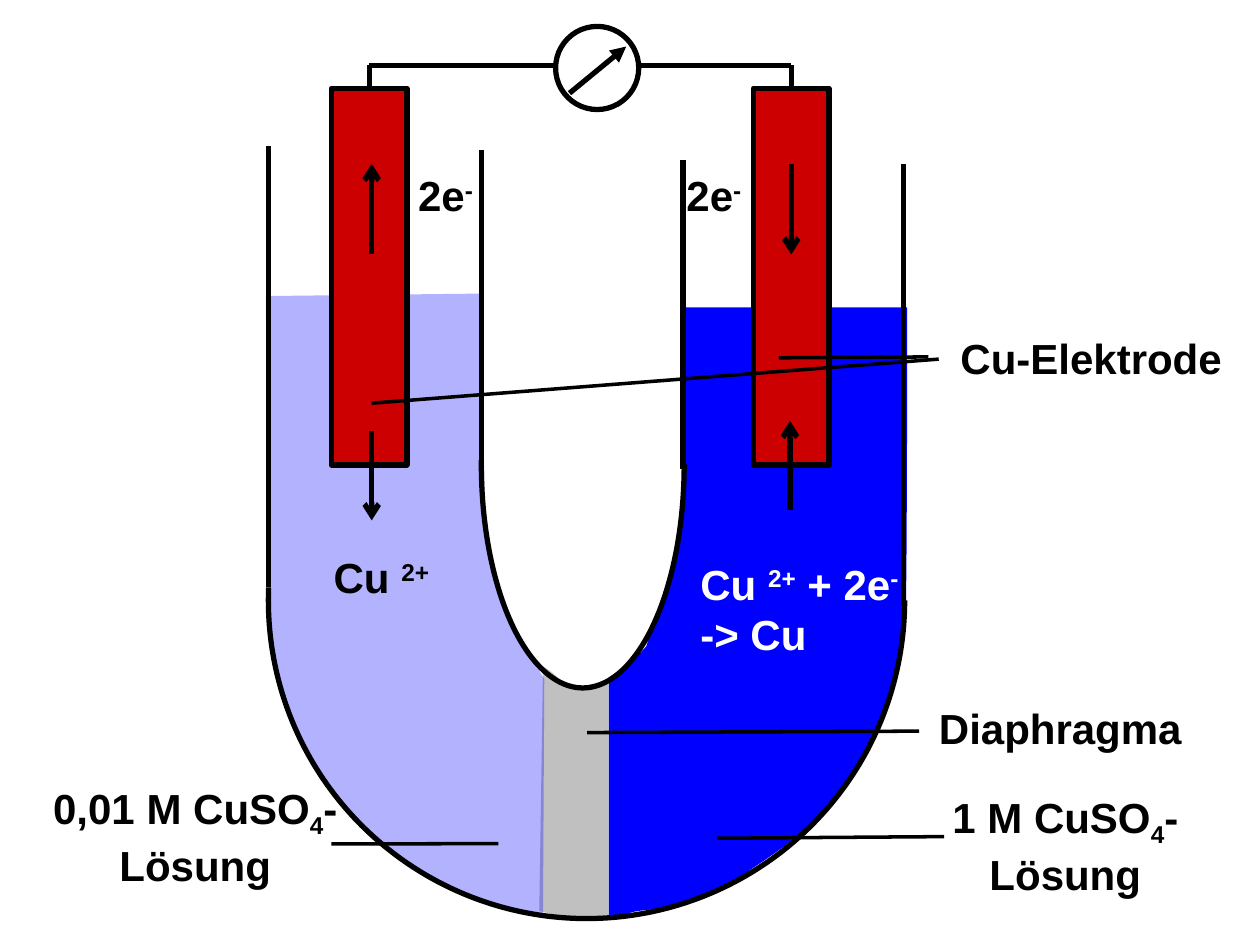
from dataclasses import dataclass

from lxml import etree
from pptx import Presentation
from pptx.dml.color import RGBColor
from pptx.enum.shapes import MSO_CONNECTOR, MSO_SHAPE
from pptx.enum.text import MSO_ANCHOR, PP_ALIGN
from pptx.oxml.ns import qn
from pptx.util import Inches, Pt

STRAIGHT = MSO_CONNECTOR.STRAIGHT
RECT, OVAL, ARC = MSO_SHAPE.RECTANGLE, MSO_SHAPE.OVAL, MSO_SHAPE.ARC
CALLOUT = MSO_SHAPE.LINE_CALLOUT_1_NO_BORDER
CENTER, LEFT = PP_ALIGN.CENTER, PP_ALIGN.LEFT
TOP, MIDDLE = MSO_ANCHOR.TOP, MSO_ANCHOR.MIDDLE


@dataclass(frozen=True)
class Theme:
    ink: str = "000000"
    paper: str = "FFFFFF"
    solution: str = "0000FF"
    diaphragm: str = "C0C0C0"
    copper: str = "CC0000"
    font: str = "Arial"
    size: int = 24
    heavy: int = 3
    fine: int = 2


THEME = Theme()
SUPER, SUB = 30, -25  # baseline shift in percent

# Content: fills as outlines; two numbers make a line, six a curve
FILLS = [
    (THEME.solution, None, [
        (5.42, 2.44), (7.2, 2.44), (7.2, 3.26, 7.2, 4.09, 7.19, 4.91),
        (7.12, 5.53, 6.96, 5.83, 6.76, 6.16), (6.55, 6.49, 6.25, 6.71, 5.96, 6.9),
        (5.71, 7.1, 5.91, 6.94, 5.33, 7.21), (4.79, 7.23, 5.11, 7.29, 4.83, 7.26),
        (4.83, 5.38), (5.19, 5.13, 4.88, 5.4, 5.13, 5.13),
        (5.2, 4.91, 5.18, 4.94, 5.25, 4.77), (5.33, 4.6, 5.4, 4.39, 5.43, 3.99)]),
    (THEME.diaphragm, None, [
        (4.31, 5.29), (4.56, 5.43, 4.38, 5.53, 4.83, 5.39), (4.83, 7.26),
        (4.58, 7.3, 4.58, 7.31, 4.28, 7.23)]),
    (THEME.solution, 30, [
        (2.11, 2.35), (2.13, 4.99, 2.12, 4.01, 2.13, 4.95),
        (2.24, 5.63, 2.41, 5.98, 2.77, 6.42), (2.96, 6.74, 3.02, 6.66, 3.28, 6.86),
        (3.54, 7.04, 3.49, 7.03, 3.8, 7.13), (4.19, 7.26, 4.14, 7.21, 4.31, 7.25),
        (4.32, 5.39), (4.01, 4.89, 3.93, 4.68, 3.85, 4.17), (3.82, 2.33)]),
]

# Tube: bends as boxes before their quarter turn, walls as x, top, bottom
BENDS = [(2.13, 2.24, 5.05, 5.05), (2.85, 2.88, 3.55, 1.61)]
WALLS = [(2.13, 1.16, 4.66), (7.17, 1.3, 4.8), (3.82, 1.19, 3.65), (5.42, 1.27, 3.72)]

# Circuit
ELECTRODE_CENTERS = (2.93, 6.28)
ELECTRODE_TOP, ELECTRODE_WIDTH, ELECTRODE_HEIGHT = 0.7, 0.6, 2.99
WIRE_Y = 0.52
METER = (4.41, 0.21, 0.66, 0.66)
NEEDLE = (4.52, 0.74, 4.97, 0.37)

# Flow arrows: x, from y, to y
FLOWS = [(2.95, 2.02, 1.3), (6.27, 4.05, 3.34), (2.95, 3.42, 4.13), (6.28, 1.3, 2.02)]

# Callouts: box, leader (y, x, y, x as shares of the box), fill, anchor, runs
ELECTRODE_LABEL = ((7.45, 2.49, 2.42, 0.7), (0.49, -0.034, 0.5, -0.524),
                   THEME.paper, MIDDLE, [("Cu-Elektrode", 0)])
OTHER_LABELS = [
    ((7.26, 6.23, 2.39, 1.01), (0.406, 0.098, 0.419, -0.656), None, TOP,
     [("1 M CuSO", 0), ("4", SUB), ("-Lösung", 0)]),
    ((0.23, 6.16, 2.64, 0.9), (0.598, 0.909, 0.596, 1.411), None, TOP,
     [("0,01 M CuSO", 0), ("4", SUB), ("-Lösung", 0)]),
    ((7.17, 5.53, 2.49, 0.63), (0.434, 0.05, 0.452, -1.008), None, TOP,
     [("Diaphragma", 0)]),
]
SECOND_LEADER = (2.95, 3.2, 7.45, 2.85)

# Reaction texts: box, colour, runs
ELECTRONS = [("2e", 0), ("-", SUPER)]
REACTIONS = [
    ((3.22, 1.3, 1.1, 0.5), THEME.ink, ELECTRONS),
    ((5.35, 1.3, 1.1, 0.5), THEME.ink, ELECTRONS),
    ((2.55, 4.33, 1.04, 0.5), THEME.ink, [("Cu ", 0), ("2+", SUPER)]),
    ((5.46, 4.38, 1.98, 0.91), THEME.paper,
     [("Cu ", 0), ("2+", SUPER), (" + 2e", 0), ("-", SUPER), (" -> Cu", 0)]),
]


def rgb(color):
    return RGBColor.from_string(color)


def style(shape, fill=None, line=None, width=THEME.heavy):
    shape.shadow.inherit = False
    if fill:
        shape.fill.solid()
        shape.fill.fore_color.rgb = rgb(fill)
    else:
        shape.fill.background()
    if line:
        shape.line.color.rgb = rgb(line)
        shape.line.width = Pt(width)
    else:
        shape.line.fill.background()


def add_shape(slide, kind, box, **look):
    shape = slide.shapes.add_shape(kind, *map(Inches, box))
    style(shape, **look)
    return shape


def add_line(slide, ends, width=THEME.heavy, head=None):
    line = slide.shapes.add_connector(STRAIGHT, *map(Inches, ends))
    line.line.color.rgb = rgb(THEME.ink)
    line.line.width = Pt(width)
    if head:
        etree.SubElement(line.line._get_or_add_ln(), qn("a:tailEnd"), type=head)
    etree.SubElement(line._element.spPr, qn("a:effectLst"))


def trace(outline, steps=16):
    """Turn lines and cubic curves into a list of points in EMU."""
    points = [outline[0]]
    for segment in outline[1:]:
        if len(segment) == 2:
            points.append(segment)
            continue
        start, c1, c2, end = points[-1], segment[:2], segment[2:4], segment[4:]
        for t in (i / steps for i in range(1, steps + 1)):
            u = 1 - t
            points.append(tuple(
                u**3 * a + 3 * u * u * t * b + 3 * u * t * t * c + t**3 * d
                for a, b, c, d in zip(start, c1, c2, end)))
    return [(Inches(x), Inches(y)) for x, y in points]


def add_fill(slide, color, opacity, outline):
    first, *rest = trace(outline)
    builder = slide.shapes.build_freeform(*first)
    builder.add_line_segments(rest, close=True)
    shape = builder.convert_to_shape()
    style(shape, fill=color)
    if opacity:
        tint = shape._element.spPr.find(qn("a:solidFill"))[0]
        etree.SubElement(tint, qn("a:alpha"), val=str(opacity * 1000))


def write(shape, runs, color=THEME.ink, align=LEFT, anchor=TOP):
    frame = shape.text_frame
    frame.word_wrap = True
    frame.vertical_anchor = anchor
    paragraph = frame.paragraphs[0]
    paragraph.alignment = align
    for text, shift in runs:
        run = paragraph.add_run()
        run.text = text
        run.font.name, run.font.size, run.font.bold = THEME.font, Pt(THEME.size), True
        run.font.color.rgb = rgb(color)
        if shift:
            run._r.get_or_add_rPr().set("baseline", str(shift * 1000))


def add_callout(slide, box, leader, fill, anchor, runs):
    callout = add_shape(slide, CALLOUT, box, fill=fill, line=THEME.ink, width=THEME.fine)
    for i, share in enumerate(leader):
        callout.adjustments[i] = share
    write(callout, runs, align=CENTER, anchor=anchor)


def main():
    deck = Presentation()
    deck.slide_width, deck.slide_height = Inches(10), Inches(7.5)
    slide = deck.slides.add_slide(deck.slide_layouts[6])

    # Solutions, diaphragm and U-tube
    for fill in FILLS:
        add_fill(slide, *fill)
    for box in BENDS:
        bend = add_shape(slide, ARC, box, line=THEME.ink)
        bend.rotation = 90
        bend.adjustments[0], bend.adjustments[1] = 162, 55.4  # 270° to 92°
    for x, top, bottom in WALLS:
        add_line(slide, (x, bottom, x, top))

    # Electrodes, wires and meter
    for x in ELECTRODE_CENTERS:
        box = (x - ELECTRODE_WIDTH / 2, ELECTRODE_TOP, ELECTRODE_WIDTH, ELECTRODE_HEIGHT)
        add_shape(slide, RECT, box, fill=THEME.copper, line=THEME.ink)
        add_line(slide, (x, ELECTRODE_TOP, x, WIRE_Y))
    left, right = ELECTRODE_CENTERS
    add_line(slide, (left, WIRE_Y, right, WIRE_Y))
    add_shape(slide, OVAL, METER, fill=THEME.paper, line=THEME.ink)
    add_line(slide, NEEDLE, head="triangle")

    # Flow arrows
    for x, start, end in FLOWS:
        add_line(slide, (x, start, x, end), head="arrow")

    # Labels
    add_callout(slide, *ELECTRODE_LABEL)
    add_line(slide, SECOND_LEADER, THEME.fine)
    for label in OTHER_LABELS:
        add_callout(slide, *label)
    for box, color, runs in REACTIONS:
        write(slide.shapes.add_textbox(*map(Inches, box)), runs, color)

    deck.save("out.pptx")


if __name__ == "__main__":
    main()
